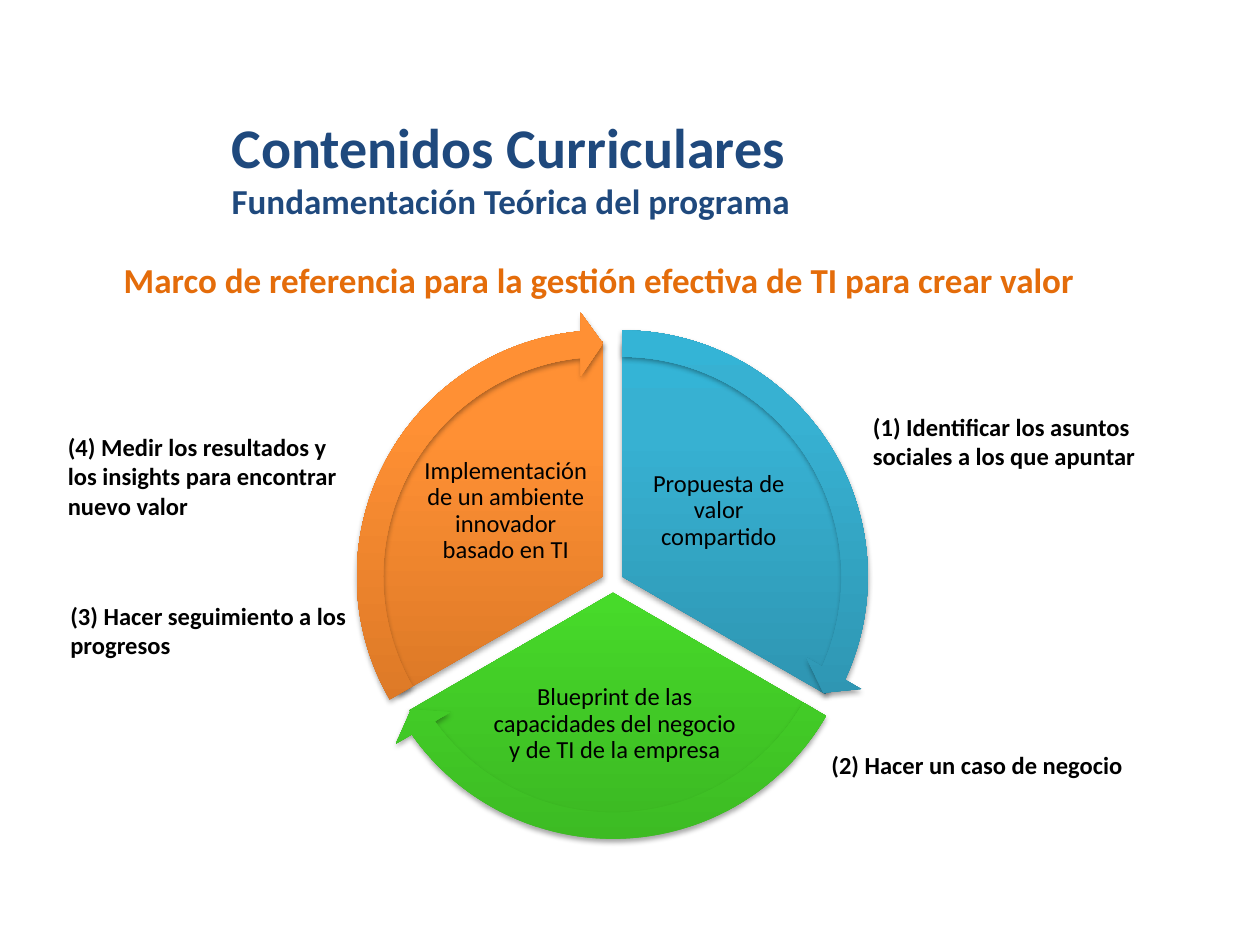
from pptx import Presentation
from pptx.dml.color import RGBColor
from pptx.enum.shapes import MSO_SHAPE as SHAPE
from pptx.enum.text import MSO_ANCHOR as ANCHOR, MSO_AUTO_SIZE as FIT, PP_ALIGN as ALIGN
from pptx.oxml import parse_xml
from pptx.oxml.ns import nsdecls
from pptx.util import Inches, Pt

THEME = {
    "font": "Calibri",
    "navy": "1F497D", "orange": "E46C0A", "black": "000000",
    "title": 32, "heading": 20, "body": 14,
    "gradients": {  # bottom, 80 %, top
        "blue": ("2A88A2", "37B1D2", "34B4D6"),
        "green": ("3CB923", "4EF02E", "4CF52A"),
        "amber": ("CC6E20", "FF9034", "FF9136"),
    },
}

TITLE = [("Contenidos Curriculares", "title"),
         ("Fundamentación Teórica del programa", "heading")]
TITLE_BOX = (1.74, 0.84, 5.06, 0.98)
HEADING = [("Marco de referencia para la gestión efectiva de TI para crear valor ", "heading")]
HEADING_BOX = (0.22, 2, 9.13, 0.44)

PIE, ARROW = 3.73, 4.2  # diameters
# gradient, pie left and top, pie angles, arrow angles, label, label box
# (angles in units of 100000/60000 degree, as adjustments take them)
SECTORS = [
    ("blue", (3.07, 2.71), (162, 18), (14.72, 161.99),
     "Propuesta de valor compartido", (5.04, 3.5, 1.33, 1.11)),
    ("green", (3, 2.84), (18, 90), (86.72, 18),
     "Blueprint de las capacidades del negocio y de TI de la empresa", (3.88, 5.26, 2, 0.98)),
    ("amber", (2.92, 2.71), (90, 162), (158.73, 90),
     "Implementación de un ambiente innovador basado en TI", (3.35, 3.5, 1.33, 1.11)),
]

STEP_WIDTH = 2.52
STEPS = [
    ("(1) Identificar los asuntos sociales a los que apuntar", 6.83, 3.22, 0.57),
    ("(2) Hacer un caso de negocio", 6.5, 5.9, 0.34),
    ("(3) Hacer seguimiento a los progresos", 0.46, 4.72, 0.57),
    ("(4) Medir los resultados y los insights para encontrar nuevo valor", 0.44, 3.38, 0.81),
]


def add_text(shapes, box, lines, color="black", bold=True, align=None):
    """Add a text box; lines are (text, size name) pairs."""
    tf = shapes.add_textbox(*map(Inches, box)).text_frame
    tf.word_wrap = True
    for i, (text, size) in enumerate(lines):
        p = tf.add_paragraph() if i else tf.paragraphs[0]
        p.text = text
        p.alignment = align
        p.font.name = THEME["font"]
        p.font.size = Pt(THEME[size])
        p.font.bold = bold
        p.font.color.rgb = RGBColor.from_string(THEME[color])
    return tf


def add_label(shapes, box, text):
    """Add a centred sector label; slim side margins keep its longest word whole."""
    tf = add_text(shapes, box, [(text, "body")], bold=False, align=ALIGN.CENTER)
    tf.vertical_anchor = ANCHOR.MIDDLE
    tf.margin_left = tf.margin_right = 0
    tf.margin_top = tf.margin_bottom = Inches(0.02)
    tf.paragraphs[0].line_spacing = 0.9


def add_round(shapes, kind, left, top, size, adjustments, gradient):
    """Add a circular shape with a vertical gradient and a soft shadow below."""
    sp = shapes.add_shape(kind, *map(Inches, (left, top, size, size)))
    for i, value in enumerate(adjustments):
        sp.adjustments[i] = value
    stops = "".join(
        f'<a:gs pos="{pos * 1000}"><a:srgbClr val="{color}"/></a:gs>'
        for pos, color in zip((0, 80, 100), THEME["gradients"][gradient]))
    spPr = sp._element.spPr
    spPr.append(parse_xml(
        f'<a:gradFill {nsdecls("a")} rotWithShape="1"><a:gsLst>{stops}</a:gsLst>'
        '<a:lin ang="16200000" scaled="0"/></a:gradFill>'))
    sp.line.fill.background()
    spPr.append(parse_xml(
        f'<a:effectLst {nsdecls("a")}><a:outerShdw blurRad="{Pt(3.1)}" dist="{Pt(1.8)}" '
        'dir="5400000" rotWithShape="0"><a:srgbClr val="000000"><a:alpha val="35000"/>'
        '</a:srgbClr></a:outerShdw></a:effectLst>'))


def add_cycle(slide):
    shapes = slide.shapes.add_group_shape().shapes
    for gradient, (left, top), angles, _, label, box in SECTORS:
        add_round(shapes, SHAPE.PIE, left, top, PIE, angles, gradient)
        add_label(shapes, box, label)
    margin = (ARROW - PIE) / 2
    for gradient, (left, top), _, (end, start), _, _ in SECTORS:
        add_round(shapes, SHAPE.CIRCULAR_ARROW, left - margin, top - margin, ARROW,
                  (0.05, 3.28, end, start, 0.06), gradient)


def main():
    prs = Presentation()
    prs.slide_width, prs.slide_height = Inches(10), Inches(7.5)
    slide = prs.slides.add_slide(prs.slide_layouts[6])
    shapes = slide.shapes

    frames = [add_text(shapes, TITLE_BOX, TITLE, "navy")]
    add_cycle(slide)
    for text, left, top, height in STEPS:
        frames.append(add_text(shapes, (left, top, STEP_WIDTH, height), [(text, "body")]))
    frames.append(add_text(shapes, HEADING_BOX, HEADING, "orange", align=ALIGN.CENTER))
    for tf in frames:
        tf.auto_size = FIT.SHAPE_TO_FIT_TEXT

    prs.save("out.pptx")


if __name__ == "__main__":
    main()
